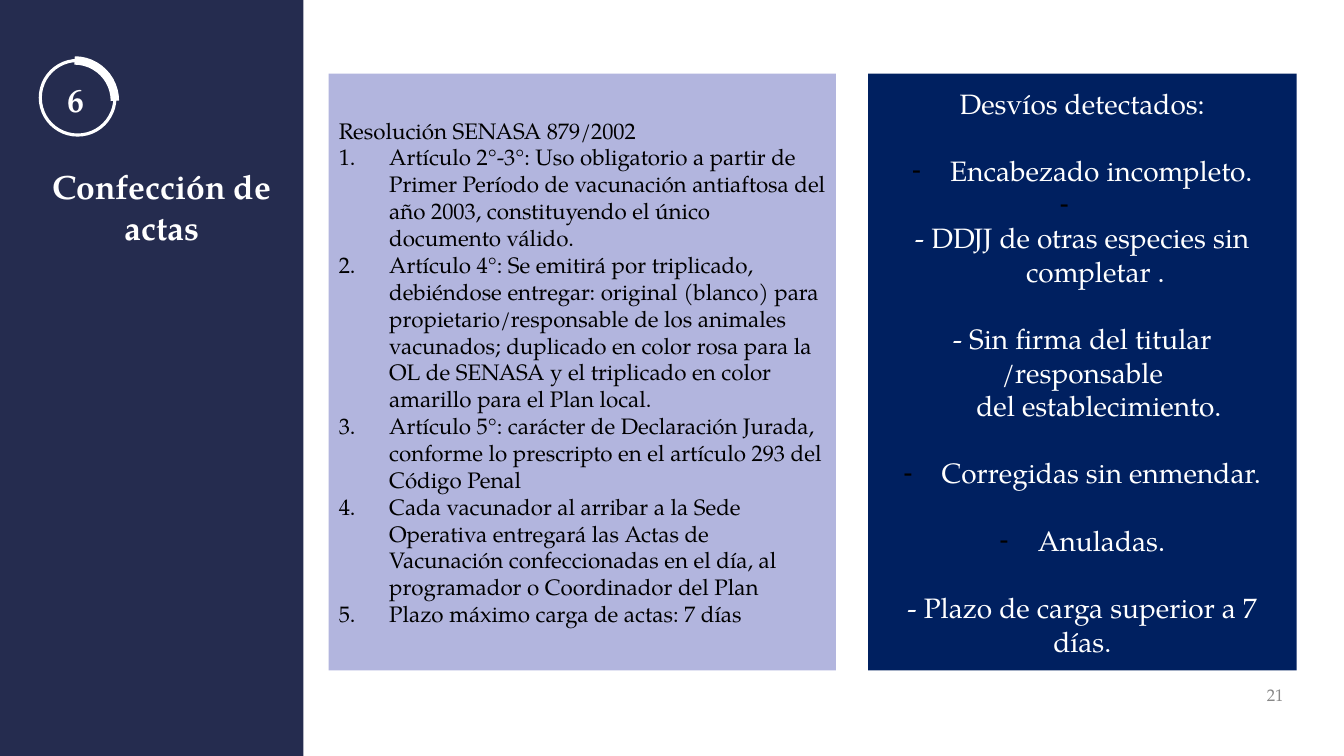
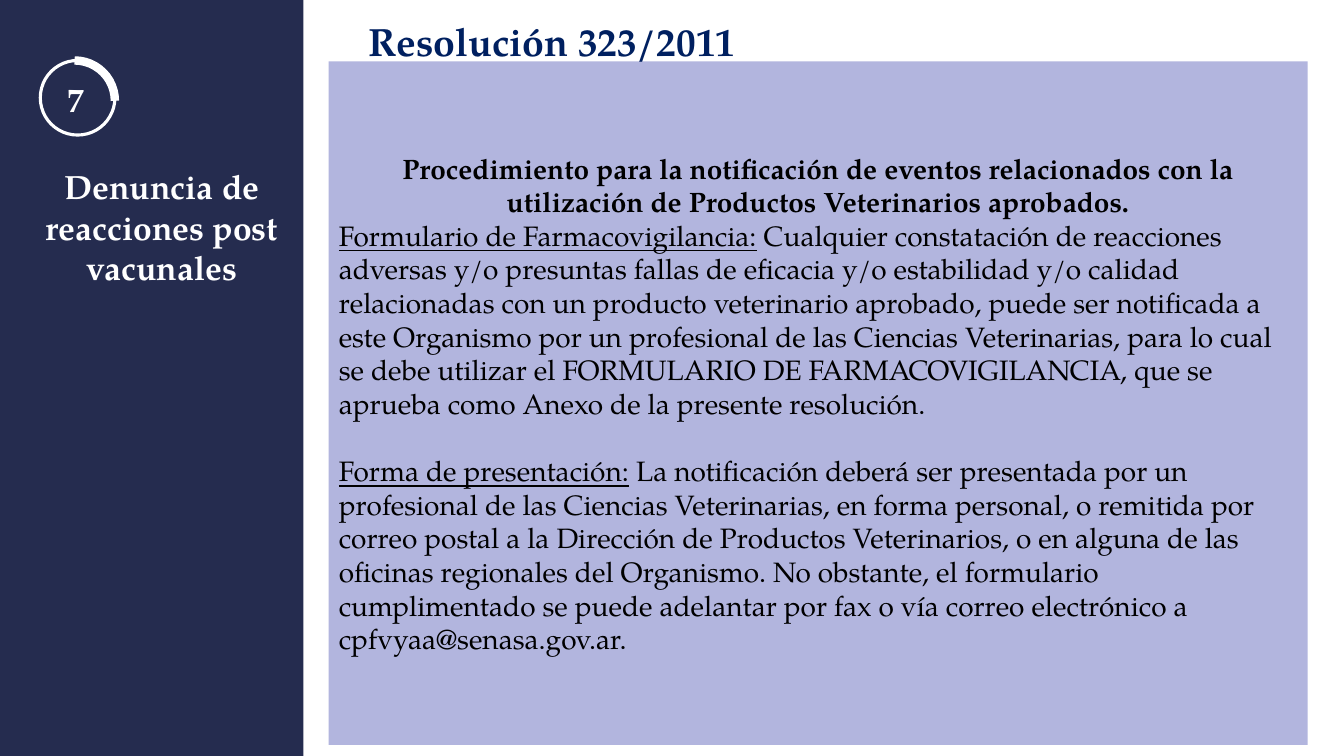
import pptx
import pptx.util
import pptx.dml.color
import pptx.enum.shapes
import pptx.enum.text
import pptx.oxml.ns
import lxml.etree

Inches = pptx.util.Inches
Pt = pptx.util.Pt
RGBColor = pptx.dml.color.RGBColor
Align = pptx.enum.text.PP_ALIGN
Anchor = pptx.enum.text.MSO_ANCHOR
Preset = pptx.enum.shapes.MSO_SHAPE

FONT = "TeX Gyre Pagella"
INDIGO = RGBColor(0x25, 0x2C, 0x4F)
NAVY = RGBColor(0x00, 0x20, 0x60)
LILAC = RGBColor(0xB2, 0xB5, 0xDE)
WHITE = RGBColor(0xFF, 0xFF, 0xFF)
BLACK = RGBColor(0x00, 0x00, 0x00)
GREY = RGBColor(0x88, 0x88, 0x88)

BLANK_LINE = 24
NUMBER = ("buAutoNum", "type", "arabicPeriod")
DASH = ("buChar", "char", "-")

RECORDS_HEADING = "Resolución SENASA 879/2002"
RECORDS_ARTICLES = [
    "Artículo 2°-3°: Uso obligatorio a partir de Primer Período de vacunación antiaftosa "
    "del año 2003, constituyendo el único documento válido.",
    "Artículo 4°: Se emitirá por triplicado, debiéndose entregar: original (blanco) para "
    "propietario/responsable de los animales vacunados; duplicado en color rosa para la OL "
    "de SENASA y el triplicado en color amarillo para el Plan local.",
    "Artículo 5°: carácter de Declaración Jurada, conforme lo prescripto en el artículo 293 "
    "del Código Penal",
    "Cada vacunador al arribar a la Sede Operativa entregará las Actas de Vacunación "
    "confeccionadas en el día, al programador o Coordinador del Plan",
    "Plazo máximo carga de actas: 7 días",
]
DEVIATIONS = [
    ("Desvíos detectados:", {}),
    ("Encabezado incompleto.", dict(marker=DASH, hang=0.38, before=BLANK_LINE)),
    (" ", dict(marker=DASH, hang=0.38)),
    ("- DDJJ de otras especies sin", {}),
    ("completar .", dict(left=0.26)),
    ("- Sin firma del titular /responsable", dict(before=BLANK_LINE)),
    ("del establecimiento.", dict(left=0.33)),
    ("Corregidas sin enmendar.", dict(marker=DASH, hang=0.38, before=BLANK_LINE)),
    ("Anuladas.", dict(marker=DASH, hang=0.38, before=BLANK_LINE)),
    ("- Plazo de carga superior a 7 días.", dict(before=BLANK_LINE)),
]
PROCEDURE = (
    "Procedimiento para la notificación de eventos relacionados con la utilización de "
    "Productos Veterinarios aprobados."
)
SECTIONS = [
    ("Formulario de Farmacovigilancia:",
     " Cualquier constatación de reacciones adversas y/o presuntas fallas de eficacia y/o "
     "estabilidad y/o calidad relacionadas con un producto veterinario aprobado, puede ser "
     "notificada a este Organismo por un profesional de las Ciencias Veterinarias, para lo "
     "cual se debe utilizar el FORMULARIO DE FARMACOVIGILANCIA, que se aprueba como Anexo "
     "de la presente resolución."),
    ("Forma de presentación:",
     " La notificación deberá ser presentada por un profesional de las Ciencias "
     "Veterinarias, en forma personal, o remitida por correo postal a la Dirección de "
     "Productos Veterinarios, o en alguna de las oficinas regionales del Organismo. No "
     "obstante, el formulario cumplimentado se puede adelantar por fax o vía correo "
     "electrónico a cpfvyaa@senasa.gov.ar."),
]


def place(shape, left, top, width, height):
    shape.left, shape.top = Inches(left), Inches(top)
    shape.width, shape.height = Inches(width), Inches(height)


def set_frame(shape, anchor, vertical_inset):
    frame = shape.text_frame
    frame.word_wrap = True
    frame.auto_size = pptx.enum.text.MSO_AUTO_SIZE.NONE
    frame.vertical_anchor = anchor
    frame.margin_left = frame.margin_right = Inches(0.1)
    frame.margin_top = frame.margin_bottom = Inches(vertical_inset)
    return frame


def add_paragraph(frame, spans, size, color, bold=False, align=Align.LEFT,
                  marker=None, left=0, hang=0, before=0):
    para = frame.paragraphs[0]
    if para.runs:
        para = frame.add_paragraph()
    properties = para._p.get_or_add_pPr()
    properties.set("marL", str(Inches(left + hang)))
    properties.set("indent", str(-Inches(hang)))
    qn = pptx.oxml.ns.qn
    if marker:
        tag, attribute, value = marker
        bullet_color = lxml.etree.SubElement(properties, qn("a:buClr"))
        lxml.etree.SubElement(bullet_color, qn("a:srgbClr")).set("val", str(BLACK))
        lxml.etree.SubElement(properties, qn("a:" + tag)).set(attribute, value)
    else:
        lxml.etree.SubElement(properties, qn("a:buNone"))
    para.alignment = align
    para.space_before = Pt(before)
    para.font.name = FONT
    para.font.size = Pt(size)
    para.font.bold = bold
    para.font.color.rgb = color
    for text, underline in spans:
        span = para.add_run()
        span.text = text
        if underline:
            span.font.underline = True


def add_label(page, bounds, text, size, color, bold=True, align=Align.LEFT, anchor=Anchor.TOP):
    box = page.shapes.add_textbox(*map(Inches, bounds))
    frame = set_frame(box, anchor, 0.05)
    add_paragraph(frame, [(text, False)], size, color, bold, align)


def fill_panel(page, index, bounds, color):
    panel = page.placeholders[index]
    place(panel, *bounds)
    panel.fill.solid()
    panel.fill.fore_color.rgb = color
    return set_frame(panel, Anchor.MIDDLE, 0.1)


def decorate_master(deck, page):
    band = page.shapes.add_shape(Preset.RECTANGLE, 0, 0, Inches(3.01), deck.slide_height)
    band.fill.solid()
    band.fill.fore_color.rgb = INDIGO
    band.line.fill.background()
    ring = page.shapes.add_shape(Preset.OVAL, *map(Inches, (0.4, 0.6, 0.74, 0.74)))
    arc = page.shapes.add_shape(Preset.ARC, *map(Inches, (0.34, 0.6, 0.8, 0.8)))
    for outline, weight in ((ring, 2.25), (arc, 6)):
        outline.fill.background()
        outline.line.color.rgb = WHITE
        outline.line.width = Pt(weight)
    master_tree = deck.slide_master.shapes.element
    for position, shape in enumerate((band, ring, arc)):
        shape.shadow.inherit = False
        shape.element.nvSpPr.cNvPr.set("id", str(100 + position))
        master_tree.insert(2 + position, shape.element)


def add_page(deck, layout_index, number, title):
    page = deck.slides.add_slide(deck.slide_layouts[layout_index])
    heading = page.shapes.title
    place(heading, 0.35, 1.55, 2.51, 1.05)
    frame = set_frame(heading, Anchor.TOP, 0.1)
    add_paragraph(frame, [(title, False)], 24, WHITE, True, Align.CENTER)
    add_label(page, (0.57, 0.73, 0.74, 0.52), number, 24, WHITE)
    return page


def build_records(deck):
    page = add_page(deck, 3, "6", "Confección de actas")
    decorate_master(deck, page)
    rules = fill_panel(page, 1, (3.26, 0.73, 5.03, 5.92), LILAC)
    add_paragraph(rules, [(RECORDS_HEADING, False)], 16, BLACK, hang=0.5)
    for article in RECORDS_ARTICLES:
        add_paragraph(rules, [(article, False)], 16, BLACK, marker=NUMBER, hang=0.5)
    deviations = fill_panel(page, 2, (8.61, 0.73, 4.25, 5.92), NAVY)
    for text, layout in DEVIATIONS:
        add_paragraph(deviations, [(text, False)], 20, WHITE, align=Align.CENTER, **layout)
    add_label(page, (9.83, 6.69, 3, 0.4), "21", 12, GREY, False, Align.RIGHT, Anchor.MIDDLE)


def build_reactions(deck):
    page = add_page(deck, 1, "7", "Denuncia de reacciones post vacunales")
    procedure = fill_panel(page, 1, (3.26, 0.61, 9.71, 6.78), LILAC)
    add_paragraph(procedure, [(PROCEDURE, False)], 20, BLACK, True, Align.CENTER)
    for position, (lead, text) in enumerate(SECTIONS):
        add_paragraph(procedure, [(lead, True), (text, False)], 20, BLACK,
                      before=BLANK_LINE * position)
    add_label(page, (3.56, 0.12, 7.96, 0.65), "Resolución 323/2011", 28, NAVY)


def main():
    deck = pptx.Presentation()
    deck.slide_width, deck.slide_height = Inches(13.33), Inches(7.5)
    build_records(deck)
    build_reactions(deck)
    deck.save("out.pptx")


if __name__ == "__main__":
    main()
